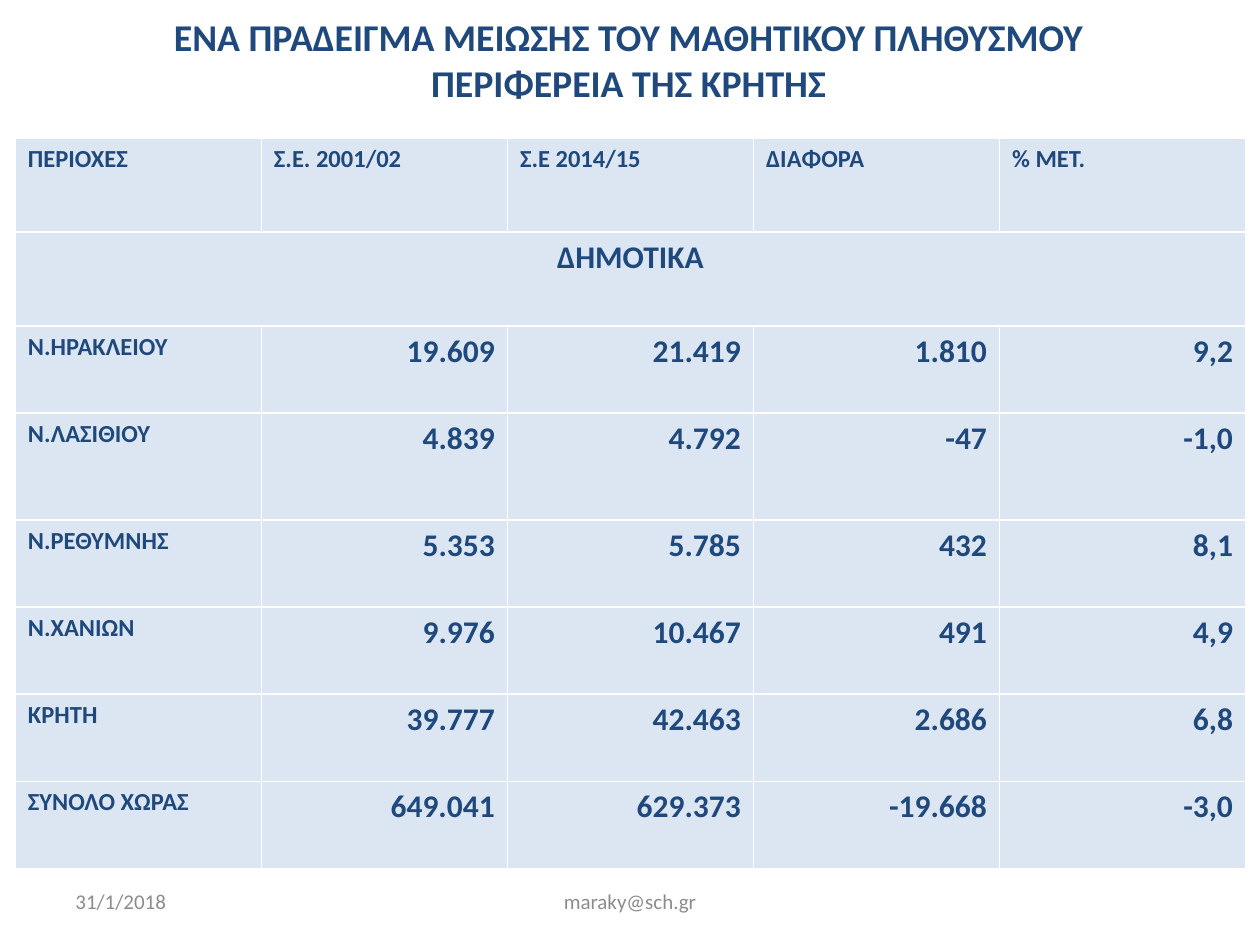
"""Build a slide with a table of pupil numbers in the regions of Crete."""
import pptx
import pptx.dml.color
import pptx.enum.text
import pptx.oxml
import pptx.oxml.ns
import pptx.util

Pt = pptx.util.Pt
RGB = pptx.dml.color.RGBColor
Align = pptx.enum.text.PP_ALIGN
Anchor = pptx.enum.text.MSO_ANCHOR
HUES = {"navy": "1F497D", "pale": "DCE6F2", "grey": "8C8C8C", "rule": "FFFFFF"}


def write(frame, text, size=14, hue="navy", bold=True, align=Align.LEFT):
    frame.word_wrap = True
    para = frame.paragraphs[0]
    para.text = text
    para.alignment = align
    for run in para.runs:
        run.font.name = "Calibri"
        run.font.size = Pt(size)
        run.font.bold = bold
        run.font.color.rgb = RGB.from_string(HUES[hue])


def style(cell):
    props = cell._tc.get_or_add_tcPr()
    for side in "LRTB":
        props.append(pptx.oxml.parse_xml(
            f'<a:ln{side} {pptx.oxml.ns.nsdecls("a")} w="12700"><a:solidFill>'
            f'<a:srgbClr val="{HUES["rule"]}"/></a:solidFill></a:ln{side}>'))
    cell.fill.solid()
    cell.fill.fore_color.rgb = RGB.from_string(HUES["pale"])


deck = pptx.Presentation()
deck.slide_width, deck.slide_height = Pt(720), Pt(540)
slide = deck.slides.add_slide(deck.slide_layouts[6])

title = "ΕΝΑ ΠΡΑΔΕΙΓΜΑ ΜΕΙΩΣΗΣ ΤΟΥ ΜΑΘΗΤΙΚΟΥ ΠΛΗΘΥΣΜΟΥ\vΠΕΡΙΦΕΡΕΙΑ ΤΗΣ ΚΡΗΤΗΣ"
plain = dict(size=12, hue="grey", bold=False)
labels = [
    (title, (34.5, 8, 649.5, 52), dict(size=21.6, align=Align.CENTER)),
    ("maraky@sch.gr", (246, 500.5, 228, 28.75), dict(plain, align=Align.CENTER)),
    ("31/1/2018", (36, 500.5, 168, 28.75), plain),
]
for text, place, form in labels:
    frame = slide.shapes.add_textbox(*map(Pt, place)).text_frame
    frame.vertical_anchor = Anchor.MIDDLE
    write(frame, text, **form)

rows = [
    ["ΠΕΡΙΟΧΕΣ", "Σ.Ε. 2001/02", "Σ.Ε 2014/15", "ΔΙΑΦΟΡΑ", "% ΜΕΤ."],
    ["ΔΗΜΟΤΙΚΑ"],
    ["Ν.ΗΡΑΚΛΕΙΟΥ", "19.609", "21.419", "1.810", "9,2"],
    ["Ν.ΛΑΣΙΘΙΟΥ", "4.839", "4.792", "-47", "-1,0"],
    ["Ν.ΡΕΘΥΜΝΗΣ", "5.353", "5.785", "432", "8,1"],
    ["Ν.ΧΑΝΙΩΝ", "9.976", "10.467", "491", "4,9"],
    ["ΚΡΗΤΗ", "39.777", "42.463", "2.686", "6,8"],
    ["ΣΥΝΟΛΟ ΧΩΡΑΣ", "649.041", "629.373", "-19.668", "-3,0"],
]
highs = [53.75, 53.75, 49.75, 61.25] + [49.75] * 4
table = slide.shapes.add_table(
    len(rows), 5, Pt(8.75), Pt(78.75), Pt(703), Pt(sum(highs))).table
for col in table.columns:
    col.width = Pt(140.6)
for row, high in zip(table.rows, highs):
    row.height = Pt(high)
for cell in table.iter_cells():
    style(cell)
table.cell(1, 0).merge(table.cell(1, 4))

for r, row in enumerate(rows):
    for c, text in enumerate(row):
        form = {}
        if len(row) == 1:
            form = dict(size=18, align=Align.CENTER)
        elif r and c:
            form = dict(size=18, align=Align.RIGHT)
        write(table.cell(r, c).text_frame, text, **form)

deck.save("out.pptx")
